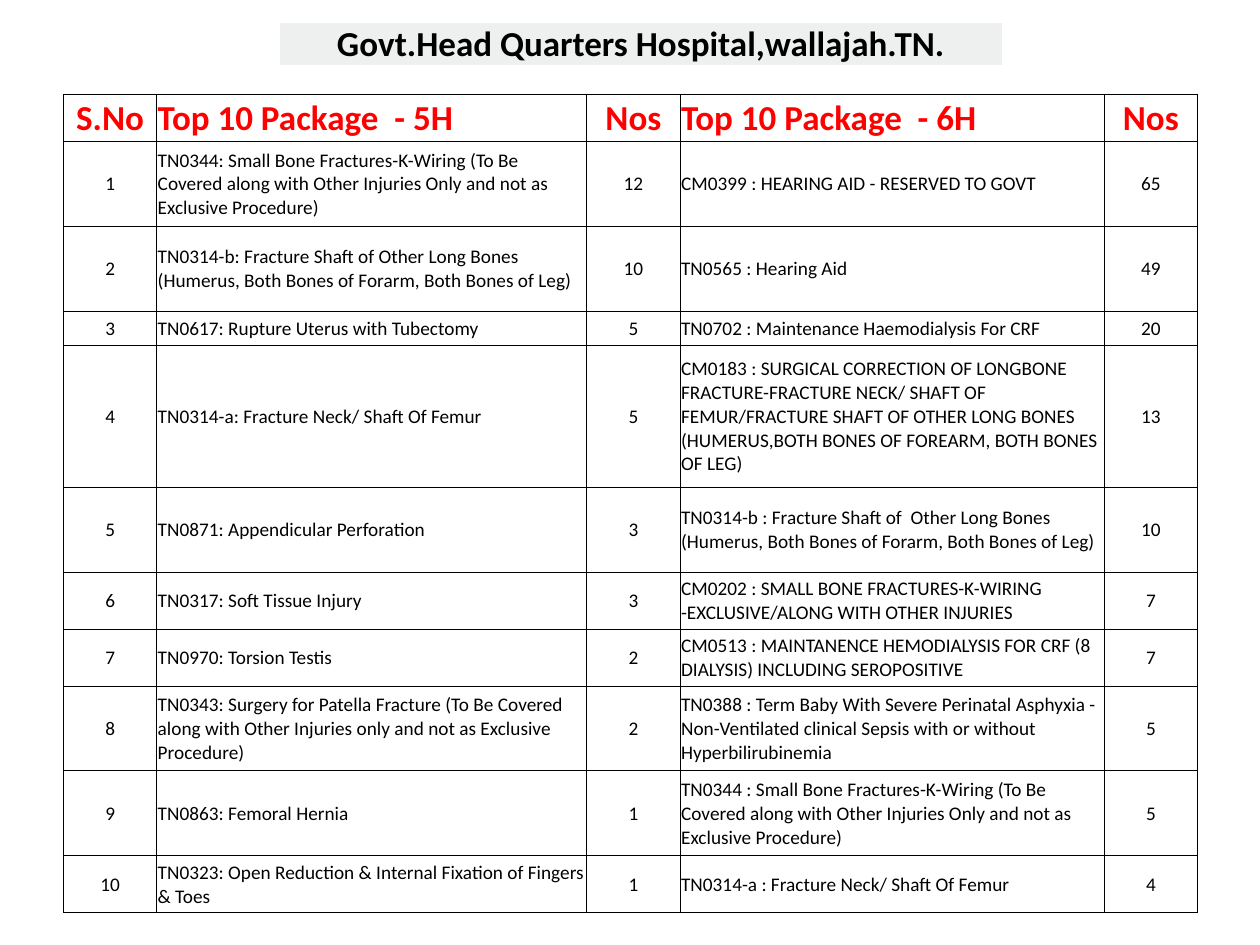
from typing import NamedTuple

import pptx
import pptx.dml.color
import pptx.enum.text
import pptx.oxml
import pptx.oxml.ns
import pptx.util

Cm = pptx.util.Cm
Pt = pptx.util.Pt
ALIGN = pptx.enum.text.PP_ALIGN
ANCHOR = pptx.enum.text.MSO_ANCHOR

FONT = "Calibri"
BLACK, WHITE, RED, GREY = "000000", "FFFFFF", "FF0000", "EEF0EF"


class CellStyle(NamedTuple):
    size: float
    color: str
    bold: bool
    fill: str
    border: str
    border_width: float
    anchor: ANCHOR = ANCHOR.MIDDLE


class Package(NamedTuple):
    number: int
    name_5h: str
    count_5h: int
    name_6h: str
    count_6h: int
    height: float


TITLE = CellStyle(20, BLACK, True, GREY, WHITE, 1, ANCHOR.BOTTOM)
HEADER = CellStyle(20, RED, True, WHITE, BLACK, 0.5)
BODY = CellStyle(11, BLACK, False, WHITE, BLACK, 0.5)

# Row heights in cm
HEADER_H, SHORT, MEDIUM, TALL, TALLEST = 0.95, 0.69, 1.15, 1.71, 2.86
COLUMNS = (1.88, 8.67, 1.88, 8.55, 1.88)
NAME_COLUMNS = (1, 3)

HEADINGS = ("S.No", "Top 10 Package  - 5H", "Nos", "Top 10 Package  - 6H", "Nos")
PACKAGES = [
    Package(1, "TN0344: Small Bone Fractures-K-Wiring (To Be Covered along with "
            "Other Injuries Only and not as Exclusive Procedure)", 12,
            "CM0399 : HEARING AID - RESERVED TO GOVT", 65, TALL),
    Package(2, "TN0314-b: Fracture Shaft of Other Long Bones (Humerus, Both Bones "
            "of Forarm, Both Bones of Leg)", 10,
            "TN0565 : Hearing Aid", 49, TALL),
    Package(3, "TN0617: Rupture Uterus with Tubectomy", 5,
            "TN0702 : Maintenance Haemodialysis For CRF", 20, SHORT),
    Package(4, "TN0314-a: Fracture Neck/ Shaft Of Femur", 5,
            "CM0183 : SURGICAL CORRECTION OF LONGBONE FRACTURE-FRACTURE NECK/ "
            "SHAFT OF FEMUR/FRACTURE SHAFT OF OTHER LONG BONES (HUMERUS,BOTH "
            "BONES OF FOREARM, BOTH BONES OF LEG)", 13, TALLEST),
    Package(5, "TN0871: Appendicular Perforation", 3,
            "TN0314-b : Fracture Shaft of  Other Long Bones (Humerus, Both Bones "
            "of Forarm, Both Bones of Leg)", 10, TALL),
    Package(6, "TN0317: Soft Tissue Injury", 3,
            "CM0202 : SMALL BONE FRACTURES-K-WIRING -EXCLUSIVE/ALONG WITH OTHER "
            "INJURIES", 7, MEDIUM),
    Package(7, "TN0970: Torsion Testis", 2,
            "CM0513 : MAINTANENCE HEMODIALYSIS FOR CRF (8 DIALYSIS) INCLUDING "
            "SEROPOSITIVE", 7, MEDIUM),
    Package(8, "TN0343: Surgery for Patella Fracture (To Be Covered along with "
            "Other Injuries only and not as Exclusive Procedure)", 2,
            "TN0388 : Term Baby With Severe Perinatal Asphyxia - Non-Ventilated "
            "clinical Sepsis with or without Hyperbilirubinemia", 5, TALL),
    Package(9, "TN0863: Femoral Hernia", 1,
            "TN0344 : Small Bone Fractures-K-Wiring (To Be Covered along with "
            "Other Injuries Only and not as Exclusive Procedure)", 5, TALL),
    Package(10, "TN0323: Open Reduction & Internal Fixation of Fingers & Toes", 1,
            "TN0314-a : Fracture Neck/ Shaft Of Femur", 4, MEDIUM),
]


def rgb(color: str) -> pptx.dml.color.RGBColor:
    return pptx.dml.color.RGBColor.from_string(color)


def set_borders(cell, color: str, width: float) -> None:
    tc_pr = cell._tc.get_or_add_tcPr()
    for side in "LRTB":
        tc_pr.append(pptx.oxml.parse_xml(
            f'<a:ln{side} {pptx.oxml.ns.nsdecls("a")} w="{Pt(width)}">'
            f'<a:solidFill><a:srgbClr val="{color}"/></a:solidFill></a:ln{side}>'))


def write_cell(cell, text: str, style: CellStyle, align: ALIGN) -> None:
    set_borders(cell, style.border, style.border_width)
    cell.fill.solid()
    cell.fill.fore_color.rgb = rgb(style.fill)
    cell.margin_left = cell.margin_right = cell.margin_top = Cm(0.02)
    cell.margin_bottom = 0
    cell.vertical_anchor = style.anchor
    p = cell.text_frame.paragraphs[0]
    p.text = text
    p.alignment = align
    for r in p.runs:
        r.font.name = FONT
        r.font.size = Pt(style.size)
        r.font.bold = style.bold
        r.font.color.rgb = rgb(style.color)


def add_table(s, left: float, top: float, widths: tuple, heights: list):
    table = s.shapes.add_table(len(heights), len(widths), Cm(left), Cm(top),
                               Cm(sum(widths)), Cm(sum(heights))).table
    table.first_row = table.horz_banding = False
    for column, width in zip(table.columns, widths):
        column.width = Cm(width)
    for row, height in zip(table.rows, heights):
        row.height = Cm(height)
    return table


def main() -> None:
    prs = pptx.Presentation()
    prs.slide_width, prs.slide_height = Cm(25.4), Cm(19.05)
    s = prs.slides.add_slide(prs.slide_layouts[6])

    # Hospital name in a one-cell table
    banner = add_table(s, 5.62, 0.44, (14.6,), [0.86])
    write_cell(banner.cell(0, 0), "Govt.Head Quarters Hospital,wallajah.TN.",
               TITLE, ALIGN.CENTER)

    # Package table: headings, then one row for each rank
    heights = [HEADER_H] + [package.height for package in PACKAGES]
    table = add_table(s, 1.28, 1.9, COLUMNS, heights)
    rows = [HEADINGS] + [package[:-1] for package in PACKAGES]
    for i, values in enumerate(rows):
        for j, value in enumerate(values):
            write_cell(table.cell(i, j), str(value), BODY if i else HEADER,
                       ALIGN.LEFT if j in NAME_COLUMNS else ALIGN.CENTER)

    prs.save("out.pptx")


if __name__ == "__main__":
    main()
